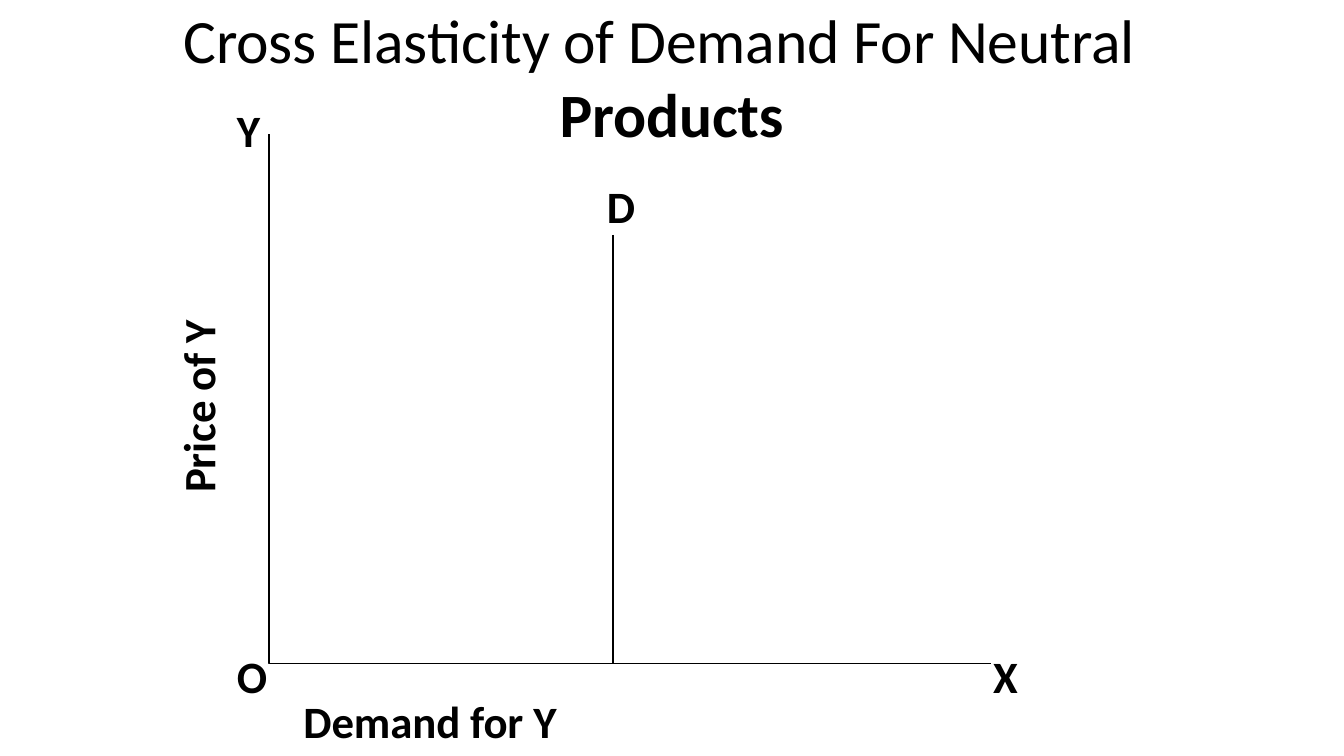
from pptx import Presentation
from pptx import util as u
from pptx.dml.color import RGBColor
from pptx.enum import shapes, text
from pptx.oxml import parse_xml
from pptx.oxml.ns import nsdecls

BLACK = RGBColor(0, 0, 0)
FONT = "Calibri"
TITLE_SIZE, LABEL_SIZE = 44, 32
LABEL_HEIGHT = 0.56


class DiagramSlide:
    def __init__(self, prs):
        self.slide = prs.slides.add_slide(prs.slide_layouts[5])

    def frame(self, shape, box, top_inset=0.01, anchor=text.MSO_ANCHOR.TOP):
        shape.left, shape.top, shape.width, shape.height = map(u.Inches, box)
        frame = shape.text_frame
        frame.word_wrap = True
        frame.auto_size = text.MSO_AUTO_SIZE.NONE
        frame.vertical_anchor = anchor
        frame.margin_left = frame.margin_right = frame.margin_bottom = 0
        frame.margin_top = u.Inches(top_inset)
        return frame

    def style(self, paragraph, size, bold=True, indent=0.01):
        paragraph.alignment = text.PP_ALIGN.LEFT
        paragraph._p.get_or_add_pPr().set("marL", str(u.Inches(indent)))
        for run in paragraph.runs:
            font = run.font
            font.name, font.size, font.bold = FONT, u.Pt(size), bold
            font.color.rgb = BLACK
            # Slightly tightened letter spacing, in hundredths of a point
            run._r.get_or_add_rPr().set("spc", "-10")

    def title(self, words, box):
        frame = self.frame(self.slide.shapes.title, box, anchor=text.MSO_ANCHOR.MIDDLE)
        frame.text = words
        self.style(frame.paragraphs[0], TITLE_SIZE, bold=False)

    def label(self, words, box, size=LABEL_SIZE, top_inset=0.01):
        shape = self.slide.shapes.add_textbox(0, 0, 0, 0)
        frame = self.frame(shape, box, top_inset)
        frame.text = words
        self.style(frame.paragraphs[0], size)
        return frame

    def vertical_label(self, words, box):
        frame = self.label(words, box, top_inset=0)
        frame._txBody.bodyPr.set("vert", "vert270")
        frame.paragraphs[0].line_spacing = u.Pt(31.4)

    def outline(self, shape):
        shape.line.color.rgb = BLACK
        shape.line.width = u.Pt(1)

    def axes(self, top, origin, end):
        points = [tuple(map(u.Inches, point)) for point in (top, origin, end)]
        builder = self.slide.shapes.build_freeform(*points[0])
        builder.add_line_segments(points[1:], close=False)
        axes = builder.convert_to_shape()
        axes.fill.background()
        axes.shadow.inherit = False
        self.outline(axes)

    def line(self, start, end):
        line = self.slide.shapes.add_connector(
            shapes.MSO_CONNECTOR.STRAIGHT, *map(u.Inches, start + end))
        self.outline(line)
        line._element.spPr.append(parse_xml(f"<a:effectLst {nsdecls('a')}/>"))


def main():
    prs = Presentation()
    prs.slide_width, prs.slide_height = u.Inches(13.33), u.Inches(7.5)
    diagram = DiagramSlide(prs)

    # Title
    diagram.title("Cross Elasticity of Demand For Neutral", (1.81, 0, 9.72, 0.76))

    # Axes and their names
    diagram.axes((2.67, 1.33), (2.67, 6.58), (9.83, 6.58))
    diagram.vertical_label("Price of Y", (1.79, 3.15, 0.44, 1.75))
    for name, left, top, width in (("O", 2.34, 6.43, 0.33),
                                   ("Y", 2.34, 1.01, 0.26),
                                   ("X", 9.84, 6.43, 0.27),
                                   ("Demand for Y", 3, 6.87, 2.55)):
        diagram.label(name, (left, top, width, LABEL_HEIGHT))

    # Demand line, with the rest of the heading and the line's name above it
    diagram.line((6.08, 2.33), (6.08, 6.58))
    heading = diagram.label("Products", (5.54, 0.34, 2.26, 1.98), TITLE_SIZE, 0.41)
    demand_name = heading.add_paragraph()
    demand_name.text = "D"
    demand_name.space_before = u.Pt(20.6)
    diagram.style(demand_name, LABEL_SIZE, indent=0.48)

    prs.save("out.pptx")


if __name__ == "__main__":
    main()
